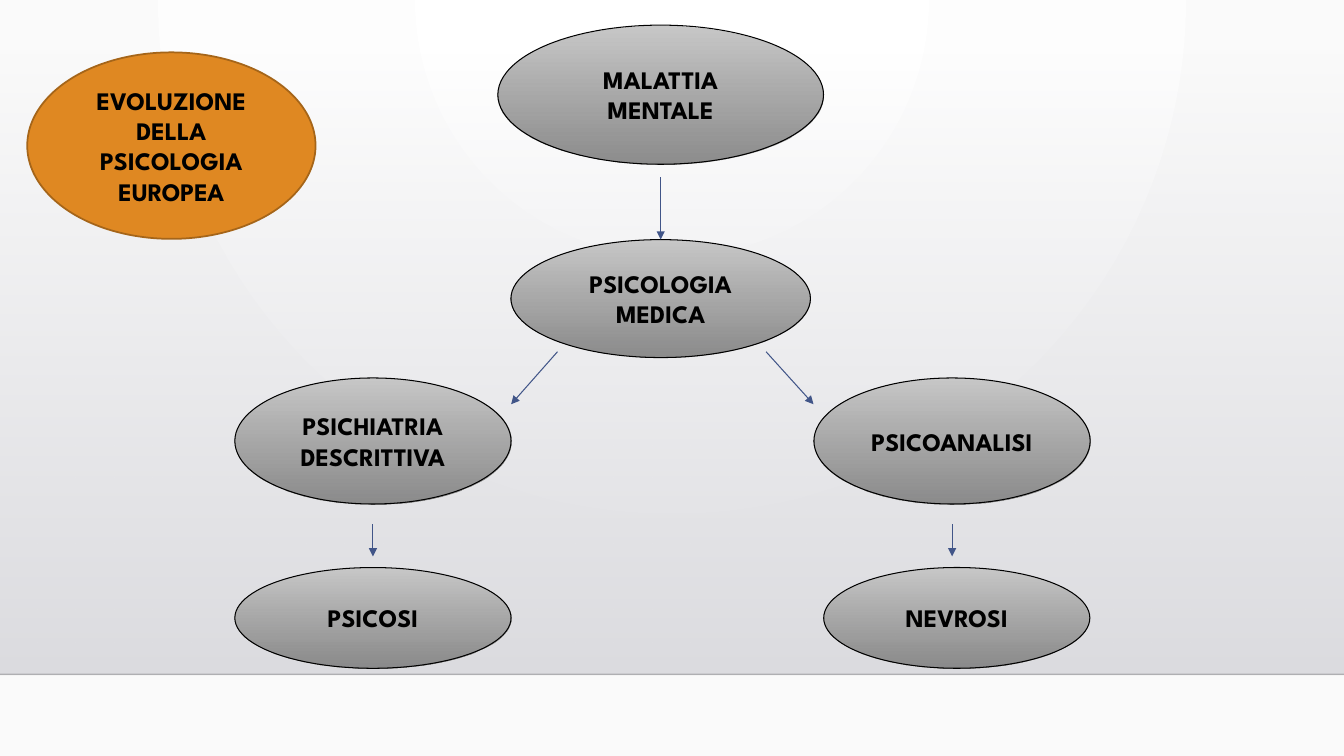
from lxml.etree import SubElement
from pptx import Presentation
from pptx.dml.color import RGBColor
from pptx.enum.shapes import MSO_CONNECTOR, MSO_SHAPE
from pptx.enum.text import MSO_ANCHOR, PP_ALIGN
from pptx.oxml.ns import qn
from pptx.util import Inches, Pt

WHITE = RGBColor(0xFF, 0xFF, 0xFF)
OFF_WHITE = RGBColor(0xFA, 0xFA, 0xFA)
PANEL_TOP = RGBColor(0xDC, 0xDC, 0xE0)
PANEL_BOTTOM = RGBColor(0xDE, 0xDE, 0xE2)
FLOOR_LINE = RGBColor(0x00, 0x00, 0x01)
BLACK = RGBColor(0x00, 0x00, 0x00)
LIGHT_GRAY = RGBColor(0xC8, 0xC8, 0xC8)
DARK_GRAY = RGBColor(0x84, 0x84, 0x84)
ORANGE = RGBColor(0xDF, 0x88, 0x22)
BROWN = RGBColor(0xA5, 0x65, 0x19)
ARROW_BLUE = RGBColor(0x41, 0x55, 0x88)

LEFT_AXIS, MIDDLE_AXIS, RIGHT_AXIS = 27.75, 49.16, 70.84
FLOOR = 89.2


class ConceptMap:
    font_name = "League Spartan"
    font_size = Pt(18)

    def __init__(self, presentation):
        self.width = presentation.slide_width
        self.height = presentation.slide_height
        self.slide = presentation.slides.add_slide(presentation.slide_layouts[6])

    def x(self, percent):
        return round(self.width * percent / 100)

    def y(self, percent):
        return round(self.height * percent / 100)

    def set_alpha(self, element, percents):
        for color, percent in zip(element.iter(qn("a:srgbClr")), percents):
            SubElement(color, qn("a:alpha"), val=str(percent * 1000))

    def gradient(self, fill, start, end):
        fill.gradient()
        fill.gradient_angle = 270
        for stop, color, position in zip(fill.gradient_stops, (start, end), (0, 1)):
            stop.color.rgb = color
            stop.position = position

    def background(self):
        self.gradient(self.slide.background.fill, WHITE, OFF_WHITE)
        gradient = next(self.slide.element.iter(qn("a:gradFill")))
        gradient.remove(gradient.find(qn("a:lin")))
        circle = SubElement(gradient, qn("a:path"), path="circle")
        SubElement(circle, qn("a:fillToRect"), l="43000", t="0", r="43000", b="100000")

    def panel(self, top, bottom):
        shape = self.slide.shapes.add_shape(
            MSO_SHAPE.RECTANGLE, 0, self.y(top), self.width, self.y(bottom - top))
        shape.shadow.inherit = False
        shape.line.fill.background()
        self.gradient(shape.fill, PANEL_TOP, PANEL_BOTTOM)
        self.set_alpha(shape.element, (0, 100))

    def line(self, start, end, color, width):
        connector = self.slide.shapes.add_connector(
            MSO_CONNECTOR.STRAIGHT, self.x(start[0]), self.y(start[1]),
            self.x(end[0]), self.y(end[1]))
        connector.line.color.rgb = color
        connector.line.width = Pt(width)
        SubElement(connector.element.spPr, qn("a:effectLst"))
        return connector

    def floor(self, row):
        connector = self.line((0, row), (100, row), FLOOR_LINE, 1)
        self.set_alpha(connector.element, (20,))

    def arrow(self, start, end):
        connector = self.line(start, end, ARROW_BLUE, 0.75)
        SubElement(connector.line._get_or_add_ln(), qn("a:tailEnd"), type="triangle")
        return connector

    def ellipse(self, text, center, top, width, height, highlighted=False):
        shape = self.slide.shapes.add_shape(
            MSO_SHAPE.OVAL, self.x(center - width / 2), self.y(top),
            self.x(width), self.y(height))
        shape.shadow.inherit = False
        if highlighted:
            shape.fill.solid()
            shape.fill.fore_color.rgb = ORANGE
        else:
            self.gradient(shape.fill, LIGHT_GRAY, DARK_GRAY)
            self.set_alpha(shape.element, (100, 92))
        shape.line.color.rgb = BROWN if highlighted else BLACK
        shape.line.width = Pt(1.25 if highlighted else 0.75)
        frame = shape.text_frame
        frame.text = text
        frame.word_wrap = True
        frame.vertical_anchor = MSO_ANCHOR.MIDDLE
        paragraph = frame.paragraphs[0]
        paragraph.alignment = PP_ALIGN.CENTER
        font = paragraph.runs[0].font
        font.name = self.font_name
        font.size = self.font_size
        font.bold = True
        font.color.rgb = BLACK
        return shape


def main():
    presentation = Presentation()
    presentation.slide_width = Inches(13.33)
    presentation.slide_height = Inches(7.5)
    concept_map = ConceptMap(presentation)

    concept_map.background()
    concept_map.panel(6.8, FLOOR)
    concept_map.floor(FLOOR)

    concept_map.ellipse("MALATTIA MENTALE", MIDDLE_AXIS, 3.33, 24.23, 18.4)
    medical = concept_map.ellipse("PSICOLOGIA MEDICA", MIDDLE_AXIS, 31.7, 22.28, 15.6)
    concept_map.arrow((MIDDLE_AXIS, 23.47), (MIDDLE_AXIS, 31.7)).end_connect(medical, 0)

    concept_map.arrow((41.48, 46.53), (38.03, 53.47))
    concept_map.arrow((57, 46.53), (60.53, 53.47))
    branches = (
        (LEFT_AXIS, "PSICHIATRIA DESCRITTIVA"),
        (RIGHT_AXIS, "PSICOANALISI"),
    )
    for axis, discipline in branches:
        concept_map.ellipse(discipline, axis, 50, 20.55, 16.67)
        concept_map.arrow((axis, 69.33), (axis, 73.6))
    concept_map.ellipse("PSICOSI", LEFT_AXIS, 75.07, 20.55, 13.33)
    concept_map.ellipse("NEVROSI", 71.19, 75.07, 19.8, 13.33)

    concept_map.ellipse("EVOLUZIONE DELLA PSICOLOGIA EUROPEA",
                        12.75, 6.93, 21.45, 24.67, highlighted=True)
    presentation.save("out.pptx")


if __name__ == "__main__":
    main()
